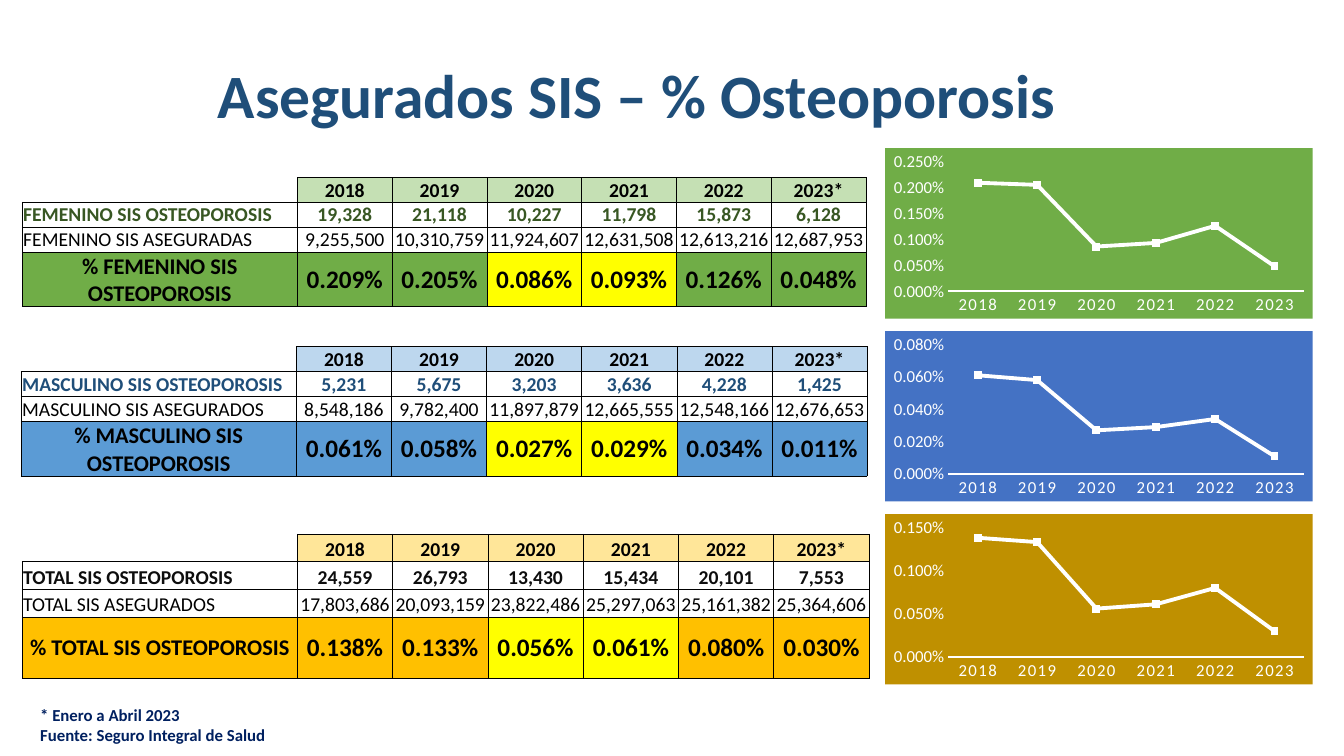
from lxml.etree import SubElement
from pptx import Presentation
from pptx.chart.data import CategoryChartData
from pptx.dml.color import RGBColor
from pptx.enum.chart import XL_CHART_TYPE as ChartType, XL_TICK_MARK as TickMark
from pptx.enum.text import MSO_ANCHOR as Anchor, MSO_AUTO_SIZE as AutoSize, PP_ALIGN as Align
from pptx.oxml import parse_xml
from pptx.oxml.ns import nsdecls, qn
from pptx.util import Inches, Pt

FONT = "Calibri"
BLACK, WHITE, YELLOW, NAVY = "000000", "FFFFFF", "FFFF00", "002060"
YEARS = ["2018", "2019", "2020", "2021", "2022", "2023"]
HIGHLIGHTED_YEARS = {"2020", "2021"}
LABEL_WIDTH = 2.73
CHART_LEFT, CHART_TOP, CHART_WIDTH, CHART_HEIGHT, CHART_PITCH = 8.78, 1.47, 4.24, 1.69, 1.815

GROUPS = [
    dict(labels=("FEMENINO SIS OSTEOPOROSIS", "FEMENINO SIS ASEGURADAS"),
         cases=(19328, 21118, 10227, 11798, 15873, 6128),
         insured=(9255500, 10310759, 11924607, 12631508, 12613216, 12687953),
         box=(0.22, 1.76, 8.37, 1.28), last_row=0.54, axis=(0.0025, 0.0005),
         header="C5E0B4", accent="70AD47", ink="385723", chart_fill="70AD47"),
    dict(labels=("MASCULINO SIS OSTEOPOROSIS", "MASCULINO SIS ASEGURADOS"),
         cases=(5231, 5675, 3203, 3636, 4228, 1425),
         insured=(8548186, 9782400, 11897879, 12665555, 12548166, 12676653),
         box=(0.21, 3.44, 8.39, 1.28), last_row=0.54, axis=(0.0008, 0.0002),
         header="BDD7EE", accent="5B9BD5", ink="1F4E79", chart_fill="4472C4"),
    dict(labels=("TOTAL SIS OSTEOPOROSIS", "TOTAL SIS ASEGURADOS"),
         cases=(24559, 26793, 13430, 15434, 20101, 7553),
         insured=(17803686, 20093159, 23822486, 25297063, 25161382, 25364606),
         box=(0.22, 5.3, 8.4, 1.43), last_row=0.61, axis=(0.0015, 0.0005),
         header="FFE699", accent="FFC000", ink="0D0D0D", chart_fill="BF9000"),
]


def rgb(value):
    return RGBColor.from_string(value)


def style_font(font, size, color, bold=False):
    font.name, font.size, font.bold = FONT, Pt(size), bold
    font.color.rgb = rgb(color)


def write(frame, text, size=14, color=BLACK, bold=False, align=Align.LEFT, spacing=None):
    """Write one paragraph per line of text."""
    for index, line in enumerate(text.split("\n")):
        paragraph = frame.paragraphs[0] if index == 0 else frame.add_paragraph()
        paragraph.alignment, paragraph.line_spacing = align, spacing
        run = paragraph.add_run()
        run.text = line
        style_font(run.font, size, color, bold)


def add_borders(cell, sides):
    """Draw thin black lines on the given sides and none on the others."""
    properties = cell._tc.get_or_add_tcPr()
    for index, side in enumerate("LRTB"):
        line = ('w="6350"><a:solidFill><a:srgbClr val="000000"/></a:solidFill>'
                if side in sides else 'w="0"><a:noFill/>')
        properties.insert(index, parse_xml(f'<a:ln{side} {nsdecls("a")} {line}</a:ln{side}>'))


def fill_cell(cell, text, fill=None, anchor=Anchor.BOTTOM, **text_format):
    cell.margin_left = cell.margin_right = cell.margin_top = Inches(0.01)
    cell.margin_bottom = 0
    cell.vertical_anchor = anchor
    if fill:
        cell.fill.solid()
        cell.fill.fore_color.rgb = rgb(fill)
    else:
        cell.fill.background()
    if text:
        write(cell.text_frame, text, **text_format)
    else:
        SubElement(cell.text_frame.paragraphs[0]._p, qn("a:endParaRPr"), sz="1400")
    add_borders(cell, "LRTB" if text else "RB")


def add_group_table(slide, group):
    left, top, width, height = group["box"]
    table = slide.shapes.add_table(4, len(YEARS) + 1, *map(Inches, group["box"])).table
    table.first_row = table.horz_banding = False
    for index, column in enumerate(table.columns):
        column.width = Inches((width - LABEL_WIDTH) / len(YEARS) if index else LABEL_WIDTH)
    for index, row in enumerate(table.rows):
        row.height = Inches(group["last_row"] if index == 3 else (height - group["last_row"]) / 3)

    case_label, insured_label = group["labels"]
    fill_cell(table.cell(0, 0), "")
    fill_cell(table.cell(1, 0), case_label, color=group["ink"], bold=True)
    fill_cell(table.cell(2, 0), insured_label)
    fill_cell(table.cell(3, 0), f"% {case_label}", group["accent"], Anchor.MIDDLE,
              size=16, bold=True, align=Align.CENTER)
    rows = zip(YEARS, group["cases"], group["insured"])
    for column, (year, cases, insured) in enumerate(rows, start=1):
        heading = f"{year}*" if year == YEARS[-1] else year
        share_fill = YELLOW if year in HIGHLIGHTED_YEARS else group["accent"]
        fill_cell(table.cell(0, column), heading, group["header"], bold=True, align=Align.CENTER)
        fill_cell(table.cell(1, column), f"{cases:,}", color=group["ink"], bold=True,
                  align=Align.CENTER)
        fill_cell(table.cell(2, column), f"{insured:,}", align=Align.CENTER)
        fill_cell(table.cell(3, column), f"{cases / insured:.3%}", share_fill, Anchor.MIDDLE,
                  size=18, bold=True, align=Align.CENTER)


def add_share_chart(slide, group, box):
    data = CategoryChartData(number_format="0.000%")
    data.categories = YEARS
    shares = [round(cases / insured, 5) for cases, insured in zip(group["cases"], group["insured"])]
    data.add_series("Series 1", shares)
    chart = slide.shapes.add_chart(ChartType.LINE, *map(Inches, box), data).chart
    chart.has_legend = chart.has_title = False
    style_font(chart.font, 10, BLACK)
    chart._chartSpace.find(qn("c:chart")).addnext(parse_xml(
        f'<c:spPr {nsdecls("c", "a")}><a:solidFill><a:srgbClr val="{group["chart_fill"]}"/>'
        '</a:solidFill><a:ln><a:noFill/></a:ln></c:spPr>'))

    series = chart.plots[0].series[0]
    chart.plots[0].vary_by_categories = series.smooth = False
    series.format.line.width = Pt(2.75)
    series.format.line.color.rgb = rgb(WHITE)
    series.marker.style = None
    for axis in (chart.category_axis, chart.value_axis):
        axis.has_major_gridlines = False
        axis.major_tick_mark = axis.minor_tick_mark = TickMark.NONE
        style_font(axis.tick_labels.font, 12, WHITE)
    chart.category_axis.format.line.color.rgb = rgb(WHITE)
    chart.category_axis.format.line.width = Pt(1)
    chart.category_axis.tick_labels.font._element.set("spc", "100")
    value_axis = chart.value_axis
    value_axis.format.line.fill.background()
    value_axis.minimum_scale = 0
    value_axis.maximum_scale, value_axis.major_unit = group["axis"]
    value_axis.tick_labels.number_format = "0.000%"
    value_axis.tick_labels.number_format_is_linked = False


def add_title(slide, box):
    title = slide.shapes.title
    title.left, title.top, title.width, title.height = map(Inches, box)
    title.text_frame.vertical_anchor = Anchor.MIDDLE
    write(title.text_frame, "Asegurados SIS – % Osteoporosis", size=44, color="1F4E79",
          bold=True, align=Align.CENTER, spacing=0.9)


def add_source_note(slide, box):
    frame = slide.shapes.add_textbox(*map(Inches, box)).text_frame
    frame.word_wrap = True
    frame.auto_size = AutoSize.SHAPE_TO_FIT_TEXT
    write(frame, "* Enero a Abril 2023\nFuente: Seguro Integral de Salud",
          size=12, color=NAVY, bold=True)


def main():
    presentation = Presentation()
    presentation.slide_width, presentation.slide_height = Inches(13.33), Inches(7.5)
    slide = presentation.slides.add_slide(presentation.slide_layouts[5])
    add_title(slide, (0.57, 0.25, 11.5, 1.45))
    add_source_note(slide, (0.3, 6.94, 6.67, 0.5))
    for index, group in enumerate(GROUPS):
        add_group_table(slide, group)
        chart_top = CHART_TOP + index * CHART_PITCH
        add_share_chart(slide, group, (CHART_LEFT, chart_top, CHART_WIDTH, CHART_HEIGHT))
    presentation.save("out.pptx")


if __name__ == "__main__":
    main()
